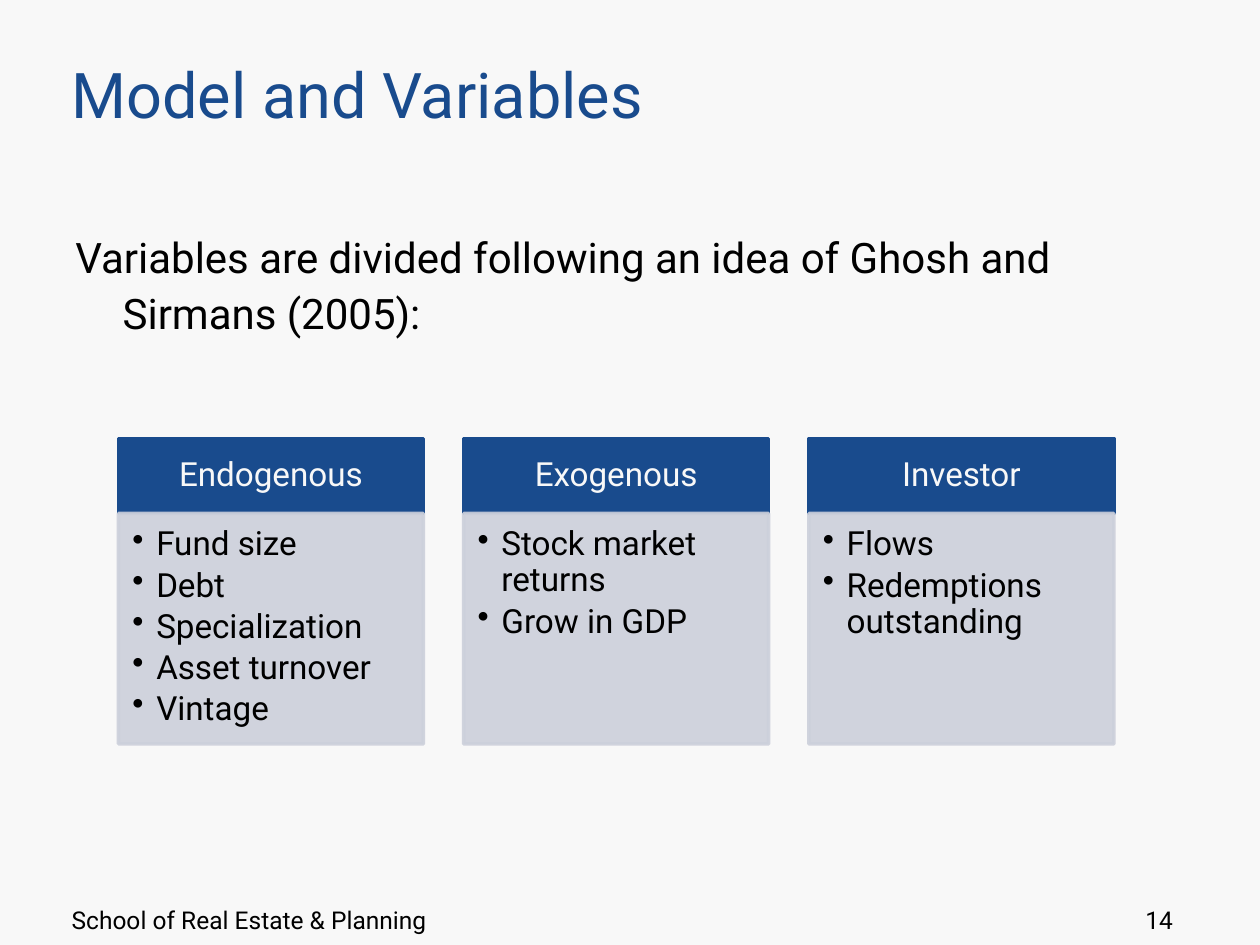
"""Builds the slide on model variables: a title, a lead line and three cards."""
from dataclasses import dataclass
from lxml.etree import SubElement
from pptx import Presentation
from pptx.dml.color import RGBColor
from pptx.enum.shapes import MSO_SHAPE
from pptx.enum.text import MSO_ANCHOR, PP_ALIGN
from pptx.oxml.ns import qn
from pptx.util import Inches, Pt


@dataclass(frozen=True)
class Theme:
    font: str = "Roboto"
    blue: str = "194B8D"
    grey: str = "CCD0DB"
    pale: str = "F8F8F8"
    ink: str = "000000"
    title: int = 36
    lead: int = 24
    card: int = 19
    foot: int = 14


theme = Theme()
deck = Presentation()
deck.slide_width, deck.slide_height = Inches(10), Inches(7.5)
cell = deck.slide_width / 100
slide = deck.slides.add_slide(deck.slide_layouts[6])
slide.background.fill.solid()
slide.background.fill.fore_color.rgb = RGBColor.from_string(theme.pale)


def span(*cells):
    return [round(n * cell) for n in cells]


def write(text, at, size, color=theme.ink, fill=None, alpha=100, align=PP_ALIGN.LEFT,
          anchor=MSO_ANCHOR.TOP, wrap=True, inset=(1, 0.5, 1, 0.5),
          hang=0, bullet=None, line=1.0, after=0):
    if fill:
        box = slide.shapes.add_shape(MSO_SHAPE.RECTANGLE, *span(*at))
        box.shadow.inherit = False
        box.line.width = Pt(2)
        box.fill.solid()
        box.line.fill.solid()
        for paint in (box.fill, box.line.fill):
            paint.fore_color.rgb = RGBColor.from_string(fill)
        if alpha < 100:
            for tone in box._element.spPr.iter(qn("a:srgbClr")):
                SubElement(tone, qn("a:alpha"), val=str(alpha * 1000))
    else:
        box = slide.shapes.add_textbox(*span(*at))
    frame = box.text_frame
    frame.word_wrap, frame.vertical_anchor = wrap, anchor
    (frame.margin_left, frame.margin_top,
     frame.margin_right, frame.margin_bottom) = span(*inset)
    frame.text = text
    for para in frame.paragraphs:
        para.alignment, para.line_spacing, para.space_after = align, line, Pt(after)
        props = para._p.get_or_add_pPr()
        indent = span(hang)[0]
        props.set("marL", str(indent))
        props.set("indent", str(-indent))
        if bullet:
            SubElement(props, qn("a:buChar"), char=bullet)
        para.font.name, para.font.size = theme.font, Pt(size)
        para.font.color.rgb = RGBColor.from_string(color)


write("School of Real Estate & Planning", (4.7, 71.3, 72.9, 3.7), theme.foot)
write("Model and Variables", (4.7, 3, 76.6, 7.9), theme.title, color=theme.blue,
      anchor=MSO_ANCHOR.BOTTOM, wrap=False)
write("14", (88.3, 71.3, 7.4, 3.7), theme.foot, align=PP_ALIGN.CENTER)
write("Variables are divided following an idea of Ghosh and Sirmans (2005):",
      (5, 17.5, 90, 49.5), theme.lead, hang=3.75, line=1.1)

cards = {
    "Endogenous": ["Fund size", "Debt", "Specialization", "Asset turnover", "Vintage"],
    "Exogenous": ["Stock market returns", "Grow in GDP"],
    "Investor": ["Flows", "Redemptions outstanding"],
}
left, top, wide, gap = 9.4, 34.8, 24.2, 3.2
head, body = 5.95, 18.3
for col, (name, items) in enumerate(cards.items()):
    x = left + col * (wide + gap)
    write(name, (x, top, wide, head), theme.card, color=theme.pale, fill=theme.blue,
          align=PP_ALIGN.CENTER, anchor=MSO_ANCHOR.MIDDLE,
          inset=(1.5, 0.8, 1.5, 0.8), line=0.9)
    write("\n".join(items), (x, top + head, wide, body), theme.card, fill=theme.grey,
          alpha=90, inset=(1.1, 1.1, 1.5, 1.7), hang=1.9, bullet="•", line=0.9, after=3)

deck.save("out.pptx")
